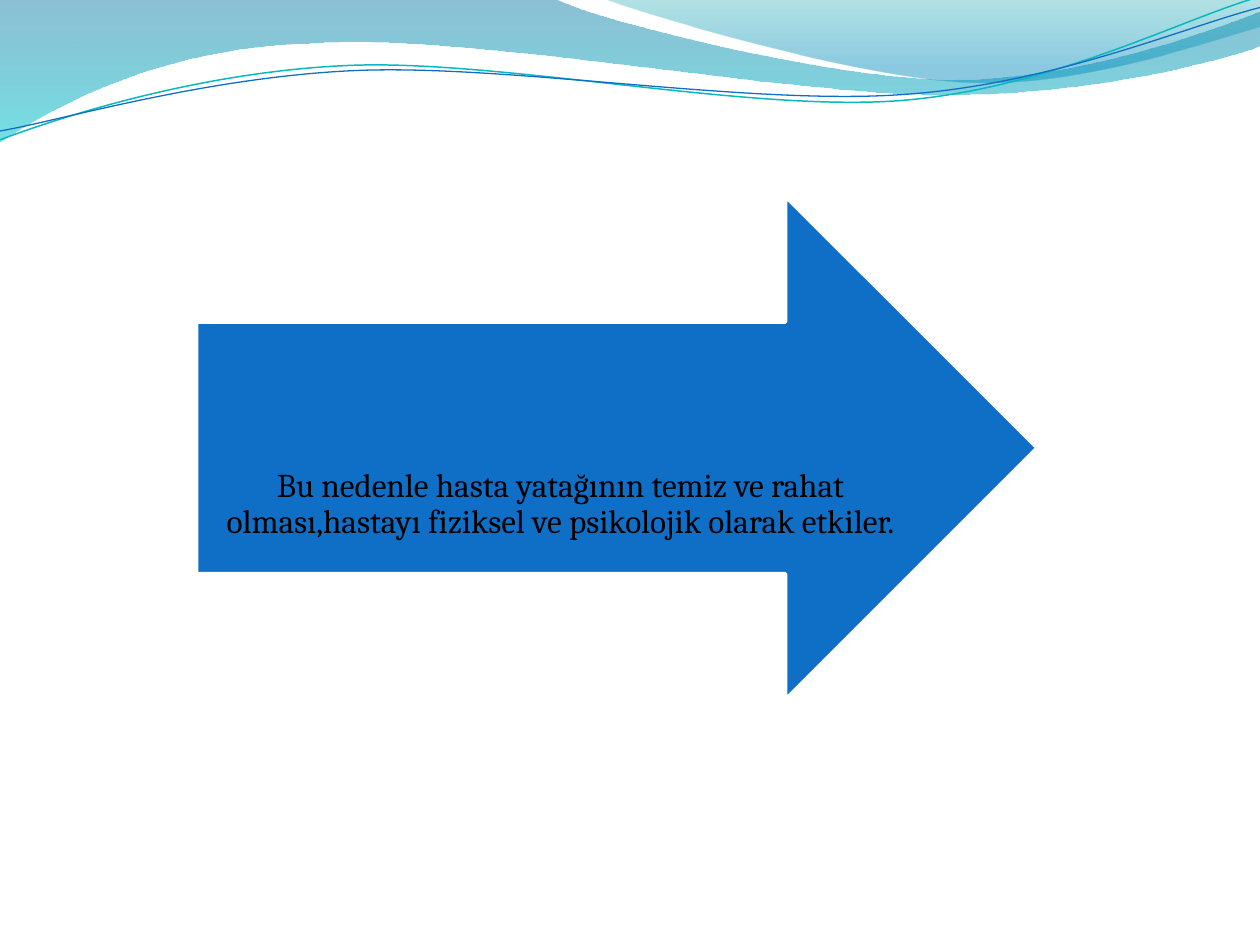
import math

import pptx
import pptx.util
import pptx.dml.color
import pptx.enum.shapes
import pptx.enum.text
import pptx.oxml

Inches, Pt = pptx.util.Inches, pptx.util.Pt
RGB = pptx.dml.color.RGBColor
make, qn = pptx.oxml.xmlchemy.OxmlElement, pptx.oxml.ns.qn

BLUE = RGB(0x0F, 0x6F, 0xC6)
TEAL = RGB(0x0A, 0xB8, 0xBF)
WHITE = RGB(255, 255, 255)
BLACK = RGB(0, 0, 0)
STEEL = RGB(0x00, 0x74, 0xA1)
AQUA = RGB(0x00, 0xC6, 0xCF)
SEA = RGB(0x00, 0xA1, 0xA9)
SKY = RGB(0x00, 0x8B, 0xBF)

WIDE, HIGH = 10, 7.5
TILT = 2.7  # degrees the thin curves lean to the left
PIVOT = (5, 0.58)
TEXT = ("Bu nedenle hasta yatağının temiz ve rahat "
        "olması,hastayı fiziksel ve psikolojik olarak etkiler.")

# Outlines in inches: a start point, then lines (2 numbers) or curves (6)
BAND = [(0, 0), (4.4, -0.01),
        (4.76, 0.17, 6.64, 0.63, 7.58, 0.63),
        (8.53, 0.63, 9.58, 0.26, 10, 0.09), (10.01, 0.36),
        (9.83, 0.44, 8.7, 0.76, 7.46, 0.75),
        (6.22, 0.75, 3.82, 0.28, 2.57, 0.34),
        (1.29, 0.36, 0.46, 0.83, -0.01, 1.13), (0, 0)]
CREST = [(4.79, -0.01),
         (5.09, 0.11, 6.82, 0.62, 7.69, 0.65),
         (8.56, 0.69, 9.61, 0.32, 10, 0.21), (10, 0), (4.79, -0.01)]
UPPER = [(0, 1.11),
         (0.48, 0.93, 1.58, 0.57, 2.77, 0.52),
         (3.95, 0.47, 5.93, 0.89, 7.13, 0.8),
         (8.33, 0.71, 9.38, 0.15, 9.98, -0.02)]
LOWER = [(0, 1.04),
         (0.47, 0.96, 1.64, 0.61, 2.83, 0.56),
         (4.03, 0.51, 5.97, 0.84, 7.17, 0.75),
         (8.36, 0.67, 9.41, 0.21, 10, 0.06)]


def pairs(step):
    return list(zip(step[0::2], step[1::2]))


def level(step):
    """Turn a step's points back by the tilt, about the pivot."""
    cos, sin = math.cos(math.radians(TILT)), math.sin(math.radians(TILT))
    flat = []
    for x, y in pairs(step):
        dx, dy = x - PIVOT[0], y - PIVOT[1]
        flat += [PIVOT[0] + cos * dx - sin * dy,
                 PIVOT[1] + sin * dx + cos * dy]
    return tuple(flat)


def add_path(slide, steps, close):
    """Freeform through the end points, with its curves bent after."""
    ends = [tuple(map(Inches, step[-2:])) for step in steps]
    pen = slide.shapes.build_freeform(*ends[0])
    pen.add_line_segments(ends[1:], close=close)
    shape = pen.convert_to_shape()
    shape.shadow.inherit = False
    lines = list(shape.element.spPr.iter(qn("a:lnTo")))
    for line, step in zip(lines, steps[1:]):
        if len(step) == 2:
            continue
        bend = make("a:cubicBezTo")
        for x, y in pairs(step):
            dot = make("a:pt")
            dot.set("x", str(Inches(x) - shape.left))
            dot.set("y", str(Inches(y) - shape.top))
            bend.append(dot)
        line.getparent().replace(line, bend)
    return shape


def add_wave(slide, steps, stops):
    """Closed wave with a see-through gradient from top to bottom."""
    shape = add_path(slide, steps, True)
    shape.line.fill.background()
    shape.fill.gradient()
    shape.fill.gradient_angle = 270
    for stop, (place, color, alpha) in zip(shape.fill.gradient_stops, stops):
        stop.position = place
        stop.color.rgb = color
    tags = shape.element.spPr.iter(qn("a:srgbClr"))
    for tag, (place, color, alpha) in zip(tags, stops):
        node = make("a:alpha")
        node.set("val", str(alpha * 1000))
        tag.append(node)


def add_curve(slide, steps, color, width):
    shape = add_path(slide, [level(step) for step in steps], False)
    shape.rotation = 360 - TILT
    shape.fill.background()
    shape.line.color.rgb = color
    shape.line.width = Pt(width)


def add_arrow(slide, *box):
    shape = slide.shapes.add_shape(
        pptx.enum.shapes.MSO_SHAPE.RIGHT_ARROW, *map(Inches, box))
    shape.shadow.inherit = False
    shape.fill.solid()
    shape.fill.fore_color.rgb = BLUE
    shape.line.color.rgb = WHITE
    shape.line.width = Pt(2)


def add_text(slide, text, *box):
    frame = slide.shapes.add_textbox(*map(Inches, box)).text_frame
    frame.word_wrap = True
    frame.vertical_anchor = pptx.enum.text.MSO_ANCHOR.MIDDLE
    frame.margin_left = frame.margin_right = 0
    frame.margin_top = frame.margin_bottom = Inches(0.21)
    para = frame.paragraphs[0]
    para.text = text
    para.alignment = pptx.enum.text.PP_ALIGN.CENTER
    para.line_spacing = 0.9
    para.font.name = "Cambria"
    para.font.size = Pt(19)
    para.font.color.rgb = BLACK


def main():
    deck = pptx.Presentation()
    deck.slide_width, deck.slide_height = Inches(WIDE), Inches(HIGH)
    slide = deck.slides.add_slide(deck.slide_layouts[6])

    # Waves along the top
    add_wave(slide, BAND, [(0, STEEL, 45), (1, AQUA, 55)])
    add_wave(slide, CREST, [(0, SEA, 30), (0.8, SKY, 45)])
    add_curve(slide, UPPER, TEAL, 0.85)
    add_curve(slide, LOWER, BLUE, 0.75)

    # Arrow with its message
    add_arrow(slide, 1.56, 1.56, 6.67, 3.99)
    add_text(slide, TEXT, 1.72, 3.36, 5.46, 1.3)

    deck.save("out.pptx")


if __name__ == "__main__":
    main()
